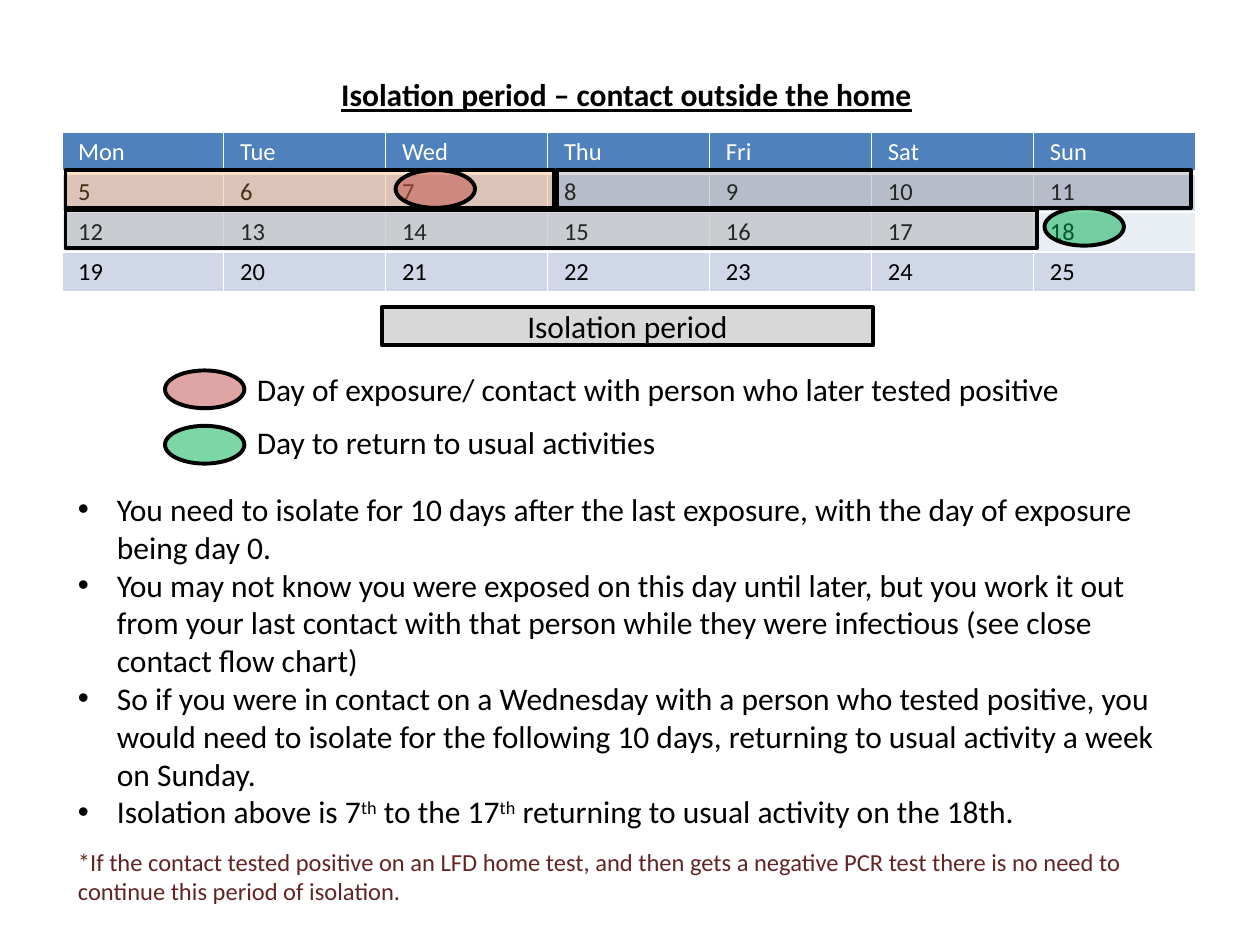
from dataclasses import dataclass
from typing import Optional

from lxml.etree import SubElement
from pptx import Presentation
from pptx.dml.color import RGBColor
from pptx.enum.shapes import MSO_SHAPE as Shape
from pptx.enum.text import MSO_ANCHOR as Anchor, MSO_AUTO_SIZE as AutoSize, PP_ALIGN as Align
from pptx.oxml.ns import qn
from pptx.util import Inches, Pt

FONT = "Calibri"
BLACK, WHITE, MAROON = "000000", "FFFFFF", "632523"
HEADER_BLUE, BAND_DARK, BAND_LIGHT = "4F81BD", "D0D8E8", "E9EDF4"
MARK_HEIGHT, OVAL_WIDTH = 0.3, 0.63


@dataclass
class Tint:
    color: str
    alpha: int  # percent opaque


@dataclass
class Mark:
    kind: Shape
    left: float
    top: float
    width: float
    tint: Tint


@dataclass
class Run:
    text: str
    raised: bool = False


@dataclass
class Caption:
    left: float
    top: float
    width: float
    height: float
    paragraphs: list[list[Run]]
    size: int = 18
    color: str = BLACK
    heading: bool = False
    bulleted: bool = False
    wrap: bool = True


EARLY_DAYS = Tint("F79646", 30)
ISOLATION = Tint("808080", 30)
EXPOSURE = Tint("C0504D", 51)
RETURN = Tint("00B050", 51)


def rgb(color: str) -> RGBColor:
    return RGBColor.from_string(color)


def add_run(paragraph, run: Run, size: int, color: str, heading: bool = False) -> None:
    piece = paragraph.add_run()
    piece.text = run.text
    font = piece.font
    font.name, font.size = FONT, Pt(size)
    font.color.rgb = rgb(color)
    if heading:
        font.bold = font.underline = True
    if run.raised:
        piece._r.get_or_add_rPr().set("baseline", "30000")


def add_bullet(paragraph) -> None:
    properties = paragraph._p.get_or_add_pPr()
    properties.set("marL", str(Inches(0.31)))
    properties.set("indent", str(-Inches(0.31)))
    SubElement(properties, qn("a:buFont"), typeface="Arial")
    SubElement(properties, qn("a:buChar"), char="•")


def add_caption(shapes, caption: Caption) -> None:
    box = shapes.add_textbox(Inches(caption.left), Inches(caption.top),
                             Inches(caption.width), Inches(caption.height))
    frame = box.text_frame
    frame.word_wrap = caption.wrap
    frame.auto_size = AutoSize.SHAPE_TO_FIT_TEXT
    for index, runs in enumerate(caption.paragraphs):
        paragraph = frame.add_paragraph() if index else frame.paragraphs[0]
        if caption.bulleted:
            add_bullet(paragraph)
        for run in runs:
            add_run(paragraph, run, caption.size, caption.color, caption.heading)


def add_mark(shapes, mark: Mark, label: Optional[str] = None) -> None:
    shape = shapes.add_shape(mark.kind, Inches(mark.left), Inches(mark.top),
                             Inches(mark.width), Inches(MARK_HEIGHT))
    shape.shadow.inherit = False
    shape.fill.solid()
    shape.fill.fore_color.rgb = rgb(mark.tint.color)
    tint = shape.element.spPr.find(f"{qn('a:solidFill')}/{qn('a:srgbClr')}")
    SubElement(tint, qn("a:alpha"), val=str(mark.tint.alpha * 1000))
    shape.line.color.rgb = rgb(BLACK)
    shape.line.width = Pt(2.25)
    if label:
        shape.text_frame.vertical_anchor = Anchor.MIDDLE
        paragraph = shape.text_frame.paragraphs[0]
        paragraph.alignment = Align.CENTER
        add_run(paragraph, Run(label), 18, BLACK)


def add_borders(cell, top: int, bottom: int) -> None:
    properties = cell._tc.get_or_add_tcPr()
    for side, width in (("L", 1), ("R", 1), ("T", top), ("B", bottom)):
        line = SubElement(properties, qn(f"a:ln{side}"), w=str(Pt(width)))
        SubElement(SubElement(line, qn("a:solidFill")), qn("a:srgbClr"), val=WHITE)


def add_calendar(shapes) -> None:
    weeks = [["Mon", "Tue", "Wed", "Thu", "Fri", "Sat", "Sun"]]
    weeks += [[str(day) for day in range(monday, monday + 7)] for monday in (5, 12, 19)]
    fills = [HEADER_BLUE, BAND_DARK, BAND_LIGHT, BAND_DARK]
    calendar = shapes.add_table(4, 7, Inches(0.49), Inches(1.05), Inches(9), Inches(1.23)).table
    for row in calendar.rows:
        row.height = Inches(0.3)
    for row, (week, fill) in enumerate(zip(weeks, fills)):
        for column, day in enumerate(week):
            cell = calendar.cell(row, column)
            cell.margin_left = cell.margin_right = Inches(0.13)
            cell.margin_top = cell.margin_bottom = Inches(0.04)
            add_borders(cell, top=3 if row == 1 else 1, bottom=3 if row == 0 else 1)
            cell.fill.solid()
            cell.fill.fore_color.rgb = rgb(fill)
            add_run(cell.text_frame.paragraphs[0], Run(day), 14, BLACK if row else WHITE)


CALENDAR_MARKS = [
    Mark(Shape.RECTANGLE, 0.52, 1.35, 3.88, EARLY_DAYS),
    Mark(Shape.OVAL, 3.14, 1.35, OVAL_WIDTH, EXPOSURE),
    Mark(Shape.OVAL, 8.29, 1.65, OVAL_WIDTH, RETURN),
    Mark(Shape.RECTANGLE, 0.52, 1.67, 7.71, ISOLATION),
    Mark(Shape.RECTANGLE, 4.42, 1.35, 5.03, ISOLATION),
]
LEGEND_BAR = Mark(Shape.RECTANGLE, 3.03, 2.44, 3.9, ISOLATION)
LEGEND_OVALS = [
    Mark(Shape.OVAL, 1.31, 2.94, OVAL_WIDTH, EXPOSURE),
    Mark(Shape.OVAL, 1.31, 3.38, OVAL_WIDTH, RETURN),
]
GUIDANCE = [
    [Run("You need to isolate for 10 days after the last exposure, with the day of exposure "
         "being day 0.")],
    [Run("You may not know you were exposed on this day until later, but you work it out from "
         "your last contact with that person while they were infectious (see close contact "
         "flow chart)")],
    [Run("So if you were in contact on a Wednesday with a person who tested positive, you would "
         "need to isolate for the following 10 days, returning to usual activity a week on "
         "Sunday.")],
    [Run("Isolation above is 7"), Run("th", raised=True), Run(" to the 17"),
     Run("th", raised=True), Run(" returning to usual activity on the 18th.")],
]
CAPTIONS = [
    Caption(1.94, 2.89, 7.52, 0.4,
            [[Run("Day of exposure/ contact with person who later tested positive")]]),
    Caption(1.94, 3.31, 3.46, 0.4, [[Run("Day to return to usual activities")]], wrap=False),
    Caption(2.61, 0.55, 4.77, 0.4, [[Run("Isolation period – contact outside the home")]],
            heading=True, wrap=False),
    Caption(0.52, 3.84, 8.74, 2.83, GUIDANCE, bulleted=True),
    Caption(0.52, 6.67, 9, 0.57,
            [[Run("*If the contact tested positive on an LFD home test, and then gets a negative "
                  "PCR test there is no need to continue this period of isolation.")]],
            size=14, color=MAROON),
]


def main() -> None:
    deck = Presentation()
    deck.slide_width, deck.slide_height = Inches(10), Inches(7.5)
    shapes = deck.slides.add_slide(deck.slide_layouts[6]).shapes

    # Calendar with its highlighted days
    add_calendar(shapes)
    highlights = shapes.add_group_shape().shapes
    for mark in CALENDAR_MARKS:
        add_mark(highlights, mark)

    # Legend
    add_mark(shapes, LEGEND_BAR, "Isolation period")
    legend = shapes.add_group_shape().shapes
    for mark in LEGEND_OVALS:
        add_mark(legend, mark)

    # Title, legend wording, guidance and footnote
    for caption in CAPTIONS:
        add_caption(shapes, caption)

    deck.save("out.pptx")


if __name__ == "__main__":
    main()
